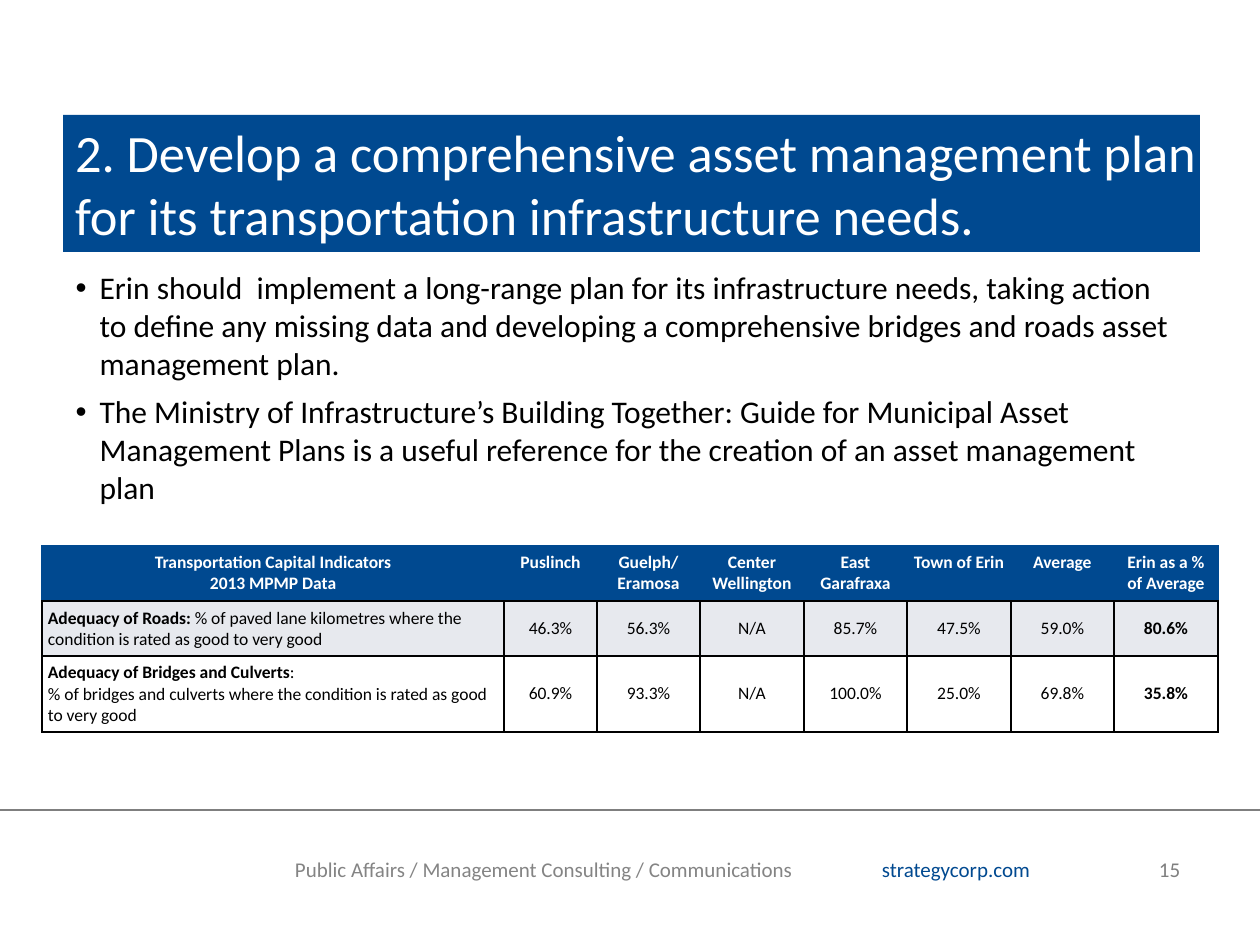
from lxml.etree import SubElement
from pptx import Presentation
from pptx.dml.color import RGBColor
from pptx.enum.shapes import MSO_CONNECTOR
from pptx.enum.text import MSO_ANCHOR, MSO_AUTO_SIZE, PP_ALIGN
from pptx.oxml.ns import qn
from pptx.util import Emu, Pt

FONT = "Calibri"
BLUE = RGBColor(0x00, 0x49, 0x90)
GREY = RGBColor(0x7F, 0x7F, 0x7F)
SLATE = RGBColor(0x84, 0x84, 0x84)
PALE = RGBColor(0xE7, 0xE9, 0xEE)
WHITE = RGBColor(0xFF, 0xFF, 0xFF)
BLACK = RGBColor(0x00, 0x00, 0x00)

TITLE = ("2. Develop a comprehensive asset management plan "
         "for its transportation infrastructure needs.")
POINTS = [
    "Erin should  implement a long-range plan for its infrastructure needs, "
    "taking action to define any missing data and developing a comprehensive "
    "bridges and roads asset management plan.",
    "The Ministry of Infrastructure’s Building Together: Guide for Municipal "
    "Asset Management Plans is a useful reference for the creation of an "
    "asset management plan",
]

# Table content: a label is a list of paragraphs, each a list of (text, bold)
HEADS = ["Puslinch", "Guelph/ Eramosa", "Center Wellington", "East Garafraxa",
         "Town of Erin", "Average", "Erin as a % of Average"]
HEAD = [[("Transportation Capital Indicators", True)], [("2013 MPMP Data", True)]]
ROADS = [[("Adequacy of Roads: ", True),
          ("% of paved lane kilometres where the condition is rated as good "
           "to very good", False)]]
SPANS = [[("Adequacy of Bridges and Culverts", True), (":", False)],
         [("% of bridges and culverts where the condition is rated as good "
           "to very good", False)]]
DATA = [
    (ROADS, ["46.3%", "56.3%", "N/A", "85.7%", "47.5%", "59.0%", "80.6%"], PALE),
    (SPANS, ["60.9%", "93.3%", "N/A", "100.0%", "25.0%", "69.8%", "35.8%"], WHITE),
]
COLS = [462, 93] + [103, 104] * 3
ROWS = [55, 55, 76]


def px(n):
    return Emu(round(n * 914400 / 126))


def place(shape, x, y, w, h):
    shape.left, shape.top, shape.width, shape.height = map(px, (x, y, w, h))


def style(par, size, color):
    for run in par.runs:
        font = run.font
        font.name, font.size = FONT, Pt(size)
        font.color.rgb = color


def inset(item, n):
    item.margin_left = item.margin_right = px(n)
    item.margin_top = item.margin_bottom = px(n)


def add_title(slide):
    shape = slide.shapes.title
    place(shape, 63, 115, 1137, 137)
    shape.fill.solid()
    shape.fill.fore_color.rgb = BLUE
    frame = shape.text_frame
    frame.text = TITLE
    frame.auto_size = MSO_AUTO_SIZE.NONE
    frame.vertical_anchor = MSO_ANCHOR.MIDDLE
    inset(frame, 0)
    frame.margin_left = px(12)
    par = frame.paragraphs[0]
    par.alignment = PP_ALIGN.LEFT
    style(par, 30, WHITE)


def add_list(slide):
    shape = slide.placeholders[1]
    place(shape, 63, 262, 1134, 525)
    frame = shape.text_frame
    frame.text = "\n".join(POINTS)
    frame.auto_size = MSO_AUTO_SIZE.NONE
    for i, par in enumerate(frame.paragraphs):
        props = par._p.get_or_add_pPr()
        props.set("marL", str(px(24)))
        props.set("indent", str(-px(24)))
        par.space_before = Pt(6 if i else 0)
        style(par, 18, BLACK)


def edge(cell, side, color):
    line = SubElement(cell._tc.get_or_add_tcPr(), qn("a:ln" + side), w=str(Pt(1)))
    fill = SubElement(line, qn("a:solidFill"))
    SubElement(fill, qn("a:srgbClr"), val=str(color))


def set_cell(cell, paras, fill, color, align, anchor, rim):
    inset(cell, 6)
    cell.vertical_anchor = anchor
    for side in "LRT":
        edge(cell, side, rim)
    edge(cell, "B", BLACK)
    cell.fill.solid()
    cell.fill.fore_color.rgb = fill
    frame = cell.text_frame
    for i, parts in enumerate(paras):
        par = frame.add_paragraph() if i else frame.paragraphs[0]
        par.alignment = align
        for text, bold in parts:
            run = par.add_run()
            run.text, run.font.bold = text, bold
        style(par, 10, color)


def add_grid(slide):
    shape = slide.shapes.add_table(len(ROWS), len(COLS), px(42), px(546),
                                   px(sum(COLS)), px(sum(ROWS)))
    table = shape.table
    table.first_row = table.horz_banding = False
    for col, wide in zip(table.columns, COLS):
        col.width = px(wide)
    for row, high in zip(table.rows, ROWS):
        row.height = px(high)

    # Header row
    heads = [HEAD] + [[[(text, True)]] for text in HEADS]
    for c, paras in enumerate(heads):
        set_cell(table.cell(0, c), paras, BLUE, WHITE,
                 PP_ALIGN.CENTER, MSO_ANCHOR.TOP, BLUE)

    # Data rows, last column in bold
    for r, (label, vals, fill) in enumerate(DATA, 1):
        set_cell(table.cell(r, 0), label, fill, BLACK,
                 PP_ALIGN.LEFT, MSO_ANCHOR.BOTTOM, BLACK)
        for c, text in enumerate(vals, 1):
            set_cell(table.cell(r, c), [[(text, c == len(vals))]], fill, BLACK,
                     PP_ALIGN.CENTER, MSO_ANCHOR.MIDDLE, BLACK)


def add_rule(slide, y):
    line = slide.shapes.add_connector(MSO_CONNECTOR.STRAIGHT,
                                      0, px(y), px(1260), px(y))
    line.line.color.rgb = GREY
    line.line.width = Pt(1)
    SubElement(line._element.spPr, qn("a:effectLst"))


def add_note(slide, x, w, text, color):
    box = slide.shapes.add_textbox(px(x), px(857), px(w), px(25))
    frame = box.text_frame
    frame.word_wrap = True
    inset(frame, 0)
    frame.text = text
    style(frame.paragraphs[0], 12, color)


def main():
    deck = Presentation()
    deck.slide_width, deck.slide_height = px(1260), px(945)
    slide = deck.slides.add_slide(deck.slide_layouts[1])

    # Main content
    add_title(slide)
    add_list(slide)
    add_grid(slide)

    # Footer
    add_rule(slide, 810)
    add_note(slide, 295, 557, "Public Affairs / Management Consulting / Communications",
             SLATE)
    add_note(slide, 882, 200, "strategycorp.com", BLUE)
    add_note(slide, 1159, 38, "15", GREY)

    deck.save("out.pptx")


if __name__ == "__main__":
    main()
